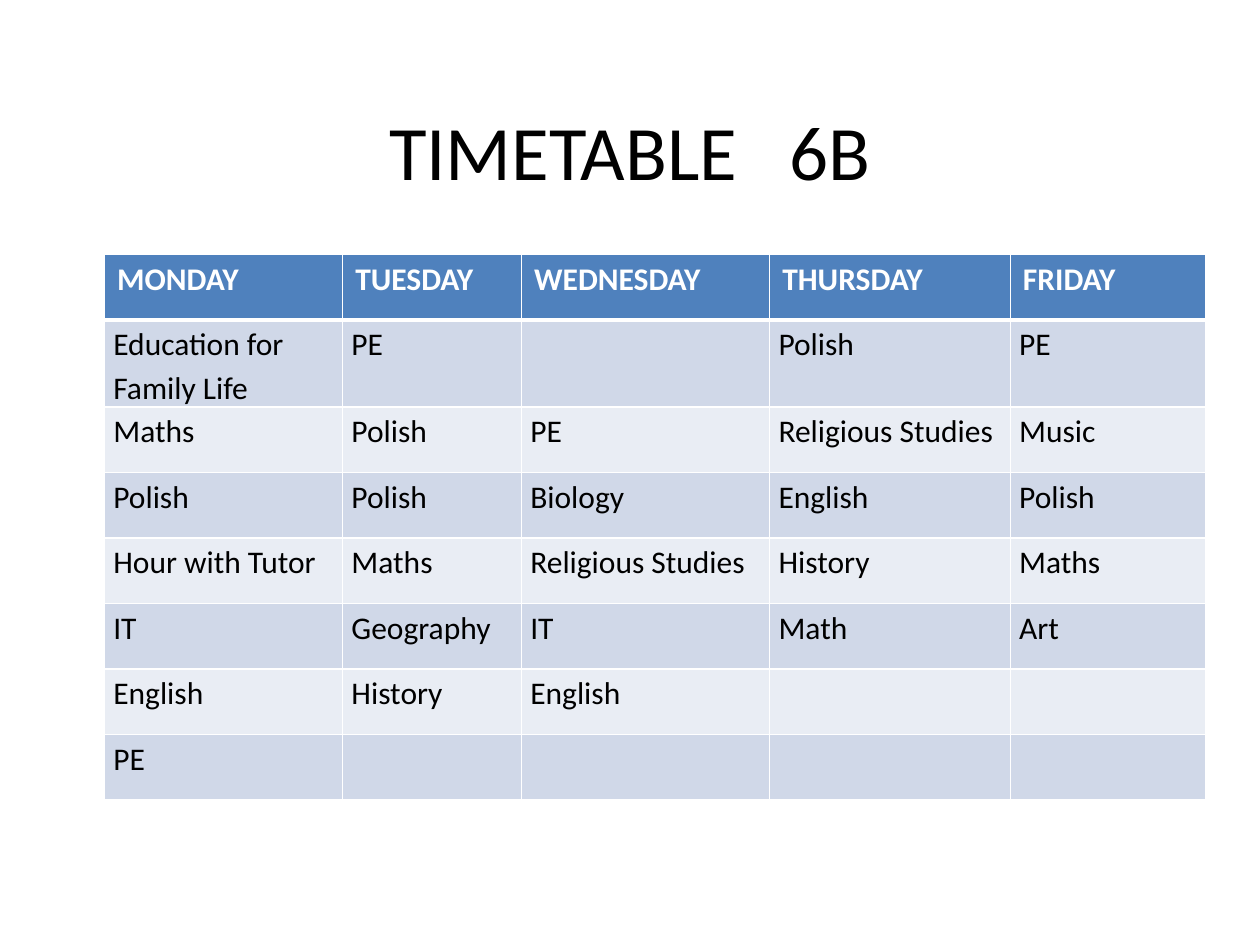
import pptx
import pptx.dml.color
import pptx.enum.text
import pptx.oxml
import pptx.oxml.ns
import pptx.util

RGBColor = pptx.dml.color.RGBColor
Inches = pptx.util.Inches
Pt = pptx.util.Pt

BLACK = RGBColor(0x00, 0x00, 0x00)
WHITE = RGBColor(0xFF, 0xFF, 0xFF)
HEADER_BLUE = RGBColor(0x4F, 0x81, 0xBD)
BAND_COLORS = (RGBColor(0xE9, 0xED, 0xF4), RGBColor(0xD0, 0xD8, 0xE8))

FONT = "Calibri"
SLIDE_WIDTH = Inches(10)
SLIDE_HEIGHT = Inches(7.5)
COLUMN_WIDTHS = (1.89, 1.42, 1.97, 1.91, 1.55)
ROW_HEIGHT = 0.52

TIMETABLE = (
    ("MONDAY", "TUESDAY", "WEDNESDAY", "THURSDAY", "FRIDAY"),
    ("Education for Family Life", "PE", "", "Polish", "PE"),
    ("Maths", "Polish", "PE", "Religious Studies", "Music"),
    ("Polish", "Polish", "Biology", "English", "Polish"),
    ("Hour with Tutor", "Maths", "Religious Studies", "History", "Maths"),
    ("IT", "Geography", "IT", "Math", "Art"),
    ("English", "History", "English", "", ""),
    ("PE", "", "", "", ""),
)


def add_span(para, text, size, color, bold=False):
    span = para.add_run()
    span.text = text
    span.font.name = FONT
    span.font.size = Pt(size)
    span.font.bold = bold
    span.font.color.rgb = color


def add_title(page, text):
    box = page.shapes.add_textbox(
        int(SLIDE_WIDTH * 0.075), int(SLIDE_HEIGHT * 0.08),
        int(SLIDE_WIDTH * 0.85), Inches(1.18))
    frame = box.text_frame
    frame.word_wrap = True
    frame.vertical_anchor = pptx.enum.text.MSO_ANCHOR.MIDDLE
    para = frame.paragraphs[0]
    para.alignment = pptx.enum.text.PP_ALIGN.CENTER
    add_span(para, text, 44, BLACK)


def set_borders(cell, top, bottom):
    properties = cell._tc.get_or_add_tcPr()
    for side, width in (("L", 1), ("R", 1), ("T", top), ("B", bottom)):
        properties.append(pptx.oxml.parse_xml(
            f'<a:ln{side} {pptx.oxml.ns.nsdecls("a")} w="{Pt(width)}">'
            f'<a:solidFill><a:srgbClr val="{WHITE}"/></a:solidFill>'
            f'</a:ln{side}>'))


def set_fill(cell, color):
    cell.fill.solid()
    cell.fill.fore_color.rgb = color


def style_header(cell, text):
    set_borders(cell, top=1, bottom=3)
    set_fill(cell, HEADER_BLUE)
    add_span(cell.text_frame.paragraphs[0], text, 18, WHITE, bold=True)


def style_lesson(cell, text, row):
    set_borders(cell, top=3 if row == 1 else 1, bottom=1)
    set_fill(cell, BAND_COLORS[row % 2])
    if text:
        cell.margin_left = cell.margin_right = Inches(0.07)
        cell.margin_top = cell.margin_bottom = 0
        para = cell.text_frame.paragraphs[0]
        para.line_spacing = 1.15
        add_span(para, text, 18, BLACK)


def add_timetable(page):
    table = page.shapes.add_table(
        len(TIMETABLE), len(COLUMN_WIDTHS), Inches(0.83), Inches(2.02),
        Inches(sum(COLUMN_WIDTHS)), Inches(ROW_HEIGHT * len(TIMETABLE))).table
    for column, width in zip(table.columns, COLUMN_WIDTHS):
        column.width = Inches(width)
    for row, lessons in enumerate(TIMETABLE):
        table.rows[row].height = Inches(ROW_HEIGHT)
        for day, text in enumerate(lessons):
            cell = table.cell(row, day)
            if row == 0:
                style_header(cell, text)
            else:
                style_lesson(cell, text, row)


def main():
    deck = pptx.Presentation()
    deck.slide_width = SLIDE_WIDTH
    deck.slide_height = SLIDE_HEIGHT
    page = deck.slides.add_slide(deck.slide_layouts[6])
    add_title(page, "TIMETABLE   6B")
    add_timetable(page)
    deck.save("out.pptx")


if __name__ == "__main__":
    main()
